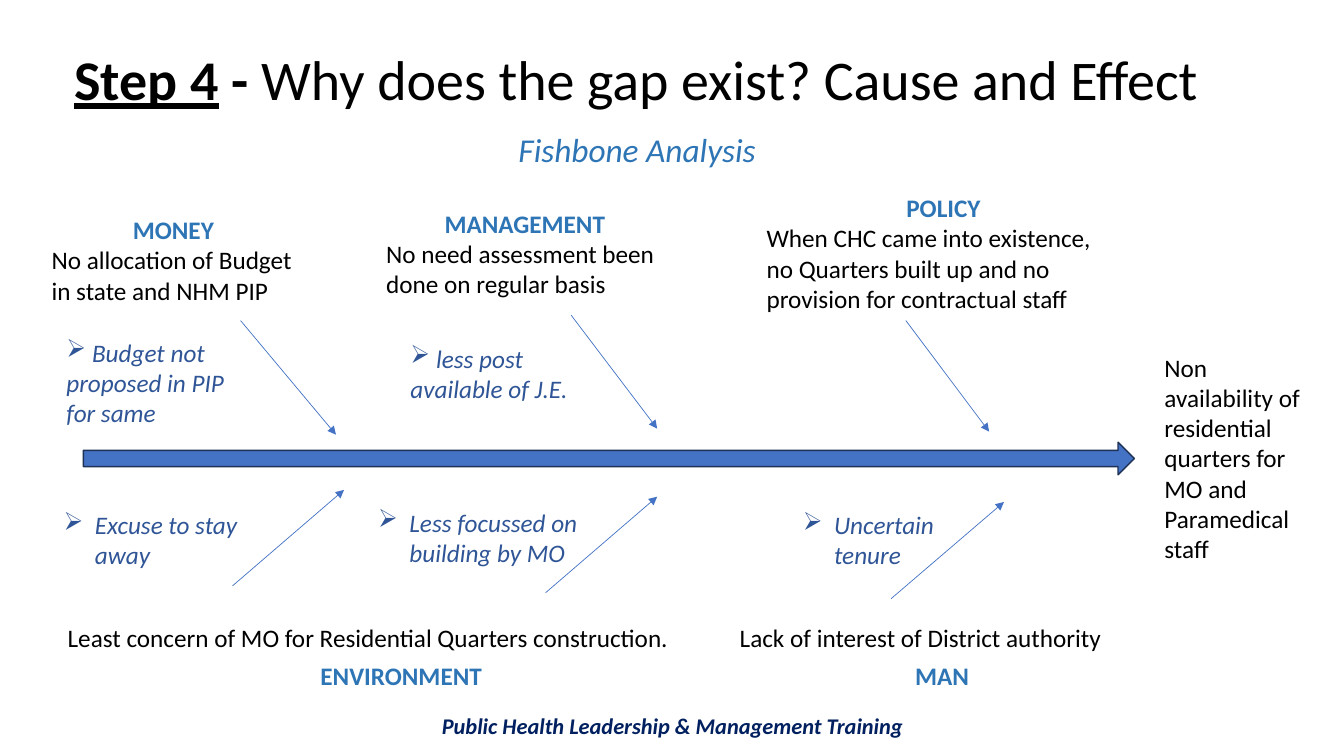
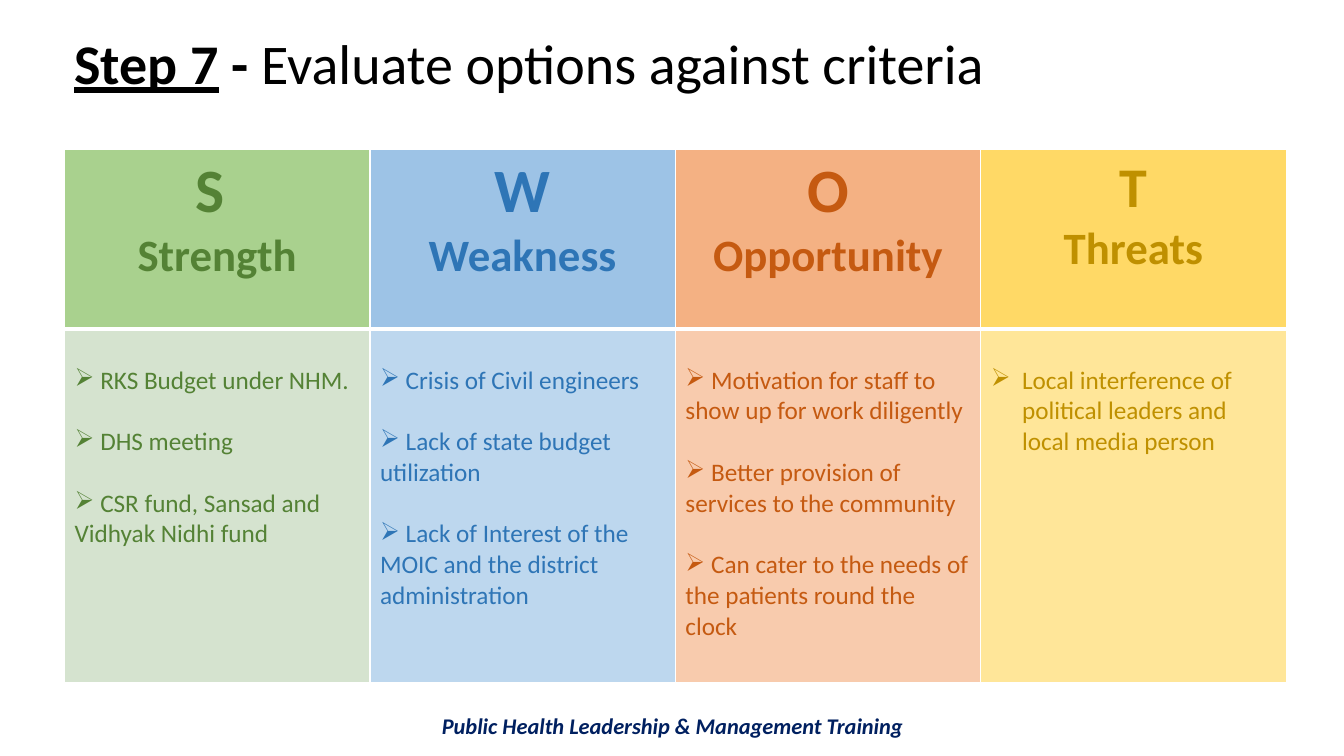
from lxml import etree
from pptx import Presentation
from pptx.dml.color import RGBColor
from pptx.enum.shapes import MSO_CONNECTOR, MSO_SHAPE
from pptx.enum.text import MSO_ANCHOR, PP_ALIGN
from pptx.oxml import parse_xml
from pptx.oxml.ns import nsdecls, qn
from pptx.util import Inches, Pt

LEFT, CENTER = PP_ALIGN.LEFT, PP_ALIGN.CENTER
TOP, MIDDLE = MSO_ANCHOR.TOP, MSO_ANCHOR.MIDDLE
STRAIGHT, RIGHT_ARROW = MSO_CONNECTOR.STRAIGHT, MSO_SHAPE.RIGHT_ARROW
FONT = "Calibri"
INDENT = Inches(0.31)
COLORS = {
    "black": "000000", "white": "FFFFFF", "footer": "002060",
    "heading": "2E75B6", "reason": "2F5597",
    "arrow": "4472C4", "outline": "1E3256",
}

prs = Presentation()
prs.slide_width, prs.slide_height = Inches(13.33), Inches(7.5)
COL, ROW = prs.slide_width / 100, prs.slide_height / 100


def add_text(tf, text, size=18, color=COLORS["black"], bold=False, italic=False,
             underline=False, align=LEFT, spacing=None, before=0, bullet=False,
             hanging=False, new=True):
    p = tf.paragraphs[-1]
    if new:
        if p.runs:
            p = tf.add_paragraph()
        p.alignment = align
        p.line_spacing = spacing
        p.space_before = Pt(before)
        if bullet:
            pPr = p._p.get_or_add_pPr()
            indent = INDENT if hanging else 0
            pPr.set("marL", str(indent))
            pPr.set("indent", str(-indent))
            etree.SubElement(pPr, qn("a:buChar"), char="➢")
    r = p.add_run()
    r.text = text
    r.font.name, r.font.size = FONT, Pt(size)
    r.font.bold, r.font.italic, r.font.underline = bold, italic, underline
    r.font.color.rgb = RGBColor.from_string(color)


def add_box(s, x, y, w, h, anchor=TOP):
    sp = s.shapes.add_textbox(int(x * COL), int(y * ROW), int(w * COL), int(h * ROW))
    tf = sp.text_frame
    tf.word_wrap = True
    tf.vertical_anchor = anchor
    return tf


slides = []
for step, title, height in [
    ("Step 4", "Why does the gap exist? Cause and Effect", 18.8),
    ("Step 7", "Evaluate options against criteria", 14.5),
]:
    s = prs.slides.add_slide(prs.slide_layouts[6])
    tf = add_box(s, 4.8, 1.5, 90.5, height, anchor=MIDDLE)
    add_text(tf, step, size=40, bold=True, underline=True, spacing=0.9)
    add_text(tf, " - ", size=40, bold=True, new=False)
    add_text(tf, title, size=40, new=False)
    tf = add_box(s, 6.9, 93.6, 86.3, 4.9)
    add_text(tf, "Public Health Leadership & Management Training", size=16,
             color=COLORS["footer"], bold=True, italic=True, align=CENTER)
    slides.append(s)

fishbone, swot = slides

tf = add_box(fishbone, 34.5, 17.9, 25.8, 5.1)
add_text(tf, "Fishbone Analysis", size=23.8, color=COLORS["heading"], italic=True,
         align=CENTER, spacing=0.7)

spine = fishbone.shapes.add_shape(RIGHT_ARROW, int(6.2 * COL), int(58.5 * ROW),
                                  int(78.2 * COL), int(4.3 * ROW))
spine.shadow.inherit = False
spine.fill.solid()
spine.fill.fore_color.rgb = RGBColor.from_string(COLORS["arrow"])
spine.line.color.rgb = RGBColor.from_string(COLORS["outline"])
spine.line.width = Pt(1)

tf = add_box(fishbone, 85.9, 45.9, 13.1, 29.6)
add_text(tf, "Non availability of residential quarters for MO and Paramedical staff")

for x1, y1, x2, y2 in [
    (17.9, 42.4, 25, 57.5), (42.5, 41.7, 48.9, 56.7), (67.4, 42.4, 73.6, 57.1),
    (17.3, 77.5, 25.6, 64.8), (40.6, 78.4, 48.9, 65.7), (66.3, 79.2, 74.7, 66.4),
]:
    bone = fishbone.shapes.add_connector(STRAIGHT, int(x1 * COL), int(y1 * ROW),
                                         int(x2 * COL), int(y2 * ROW))
    bone.line.color.rgb = RGBColor.from_string(COLORS["arrow"])
    bone.line.width = Pt(0.5)
    etree.SubElement(bone.line._get_or_add_ln(), qn("a:tailEnd"), type="triangle")
    etree.SubElement(bone._element.spPr, qn("a:effectLst"))

for x, y, w, h, heading, cause in [
    (3.1, 27.7, 19.6, 13.5, "MONEY", "No allocation of Budget in state and NHM PIP"),
    (28, 26.9, 22.1, 13.5, "MANAGEMENT", "No need assessment been done on regular basis"),
    (56.3, 24.8, 27.8, 17.5, "POLICY",
     "When CHC came into existence, no Quarters built up and no provision for contractual staff"),
]:
    tf = add_box(fishbone, x, y, w, h)
    add_text(tf, heading, color=COLORS["heading"], bold=True, align=CENTER)
    add_text(tf, cause)

for x, w, cause, heading in [
    (4.3, 51.1, "Least concern of MO for Residential Quarters construction.", "ENVIRONMENT"),
    (54.3, 31.6, "Lack of interest of District authority", "MAN"),
]:
    tf = add_box(fishbone, x, 81.6, w, 10.5)
    add_text(tf, cause)
    add_text(tf, heading, color=COLORS["heading"], bold=True, align=CENTER, before=6)

for x, y, w, h, hanging, reason in [
    (4.2, 43.9, 14.9, 13.5, False, " Budget not proposed in PIP for same"),
    (29.8, 44.7, 16, 9.5, False, " less post available of J.E."),
    (4, 66.7, 14.9, 9.5, True, "Excuse to stay away"),
    (27.4, 66.4, 20.7, 9.5, True, "Less focussed on building by MO"),
    (59, 66.7, 15.3, 9.5, True, "Uncertain tenure"),
]:
    tf = add_box(fishbone, x, y, w, h)
    add_text(tf, reason, color=COLORS["reason"], italic=True, bullet=True, hanging=hanging)

quadrants = [
    ("S ", "Strength", 44, "548235", "A9D18E", "D5E3CF", False,
     [" RKS Budget under NHM.", " DHS meeting", " CSR fund, Sansad and Vidhyak Nidhi fund"]),
    ("W", "Weakness", 44, "2E75B6", "9DC3E6", "BDD7EE", False,
     [" Crisis of Civil engineers", " Lack of state budget utilization",
      " Lack of Interest of the MOIC and the district administration"]),
    ("O", "Opportunity", 44, "C55A11", "F4B183", "F8CBAD", False,
     [" Motivation for staff to show up for work diligently",
      " Better provision of services to the community",
      " Can cater to the needs of the patients round the clock"]),
    ("T", "Threats", 40, "BF9000", "FFD966", "FFE699", True,
     ["Local interference of political leaders and local media person"]),
]
row_heights = [23.8, 46.8]
table = swot.shapes.add_table(2, len(quadrants), int(4.8 * COL), int(19.7 * ROW),
                              int(90.9 * COL), int(sum(row_heights) * ROW)).table
for row, height in zip(table.rows, row_heights):
    row.height = int(height * ROW)

for i, (letter, name, size, color, head_fill, body_fill, hanging, points) in enumerate(quadrants):
    head, body = table.cell(0, i), table.cell(1, i)
    for cell, fill, thick in [(head, head_fill, "lnB"), (body, body_fill, "lnT")]:
        for side in ["lnL", "lnR", "lnT", "lnB"]:
            width = Pt(3 if side == thick else 1)
            cell._tc.get_or_add_tcPr().append(parse_xml(
                f'<a:{side} {nsdecls("a")} w="{width}"><a:solidFill>'
                f'<a:srgbClr val="{COLORS["white"]}"/></a:solidFill></a:{side}>'))
        cell.fill.solid()
        cell.fill.fore_color.rgb = RGBColor.from_string(fill)
    add_text(head.text_frame, letter, size=size, color=color, bold=True, align=CENTER)
    add_text(head.text_frame, name, size=32, color=color, bold=True, align=CENTER)
    body.margin_top = Inches(0.36)
    for n, point in enumerate(points):
        add_text(body.text_frame, point, color=color, bullet=True, hanging=hanging,
                 before=22 if n else 0)

prs.save("out.pptx")
